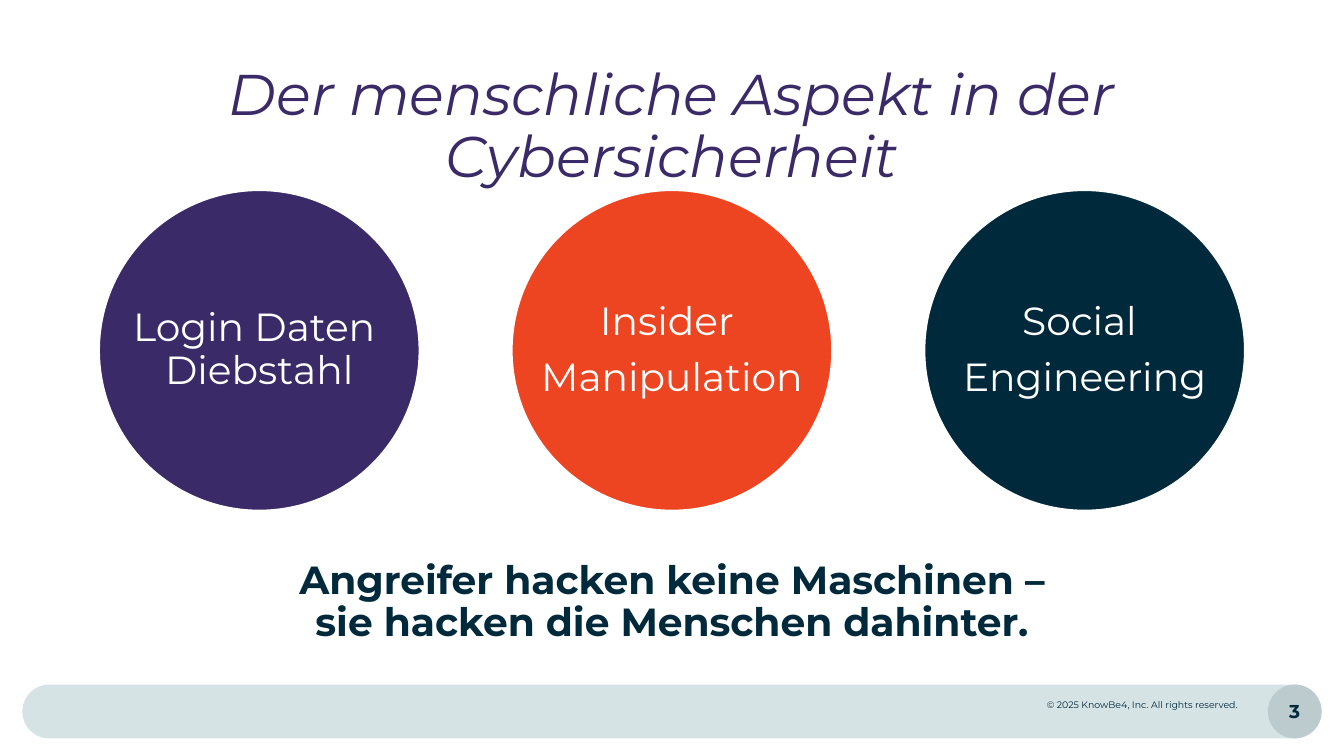
from pptx import Presentation
from pptx.dml.color import RGBColor
from pptx.enum.shapes import MSO_SHAPE as Preset
from pptx.enum.text import MSO_ANCHOR as Anchor, PP_ALIGN as Align
from pptx.util import Pt

FONT = "Montserrat"
PURPLE, ORANGE, NAVY = "3A2A68", "ED4422", "00293C"
MIST, STEEL, WHITE = "D5E3E5", "BBCBCE", "FFFFFF"
WIDTH, HEIGHT = 960, 540


def color(value):
    return RGBColor.from_string(value)


def write(frame, text, *, size, ink=NAVY, bold=False, italic=False,
          align=Align.CENTER, anchor=Anchor.MIDDLE, spacing=1.0,
          before=0, inset=0, wrap=True):
    """Fill a frame: a newline starts a paragraph, a vertical tab breaks a line."""
    frame.word_wrap = wrap
    frame.vertical_anchor = anchor
    frame.margin_left = frame.margin_right = Pt(inset)
    frame.margin_top = frame.margin_bottom = Pt(inset)
    for index, line in enumerate(text.split("\n")):
        para = frame.add_paragraph() if index else frame.paragraphs[0]
        para.text = line
        para.alignment = align
        para.line_spacing = spacing
        para.space_before = Pt(before if index else 0)
        for span in para.runs:
            span.font.name = FONT
            span.font.size = Pt(size)
            span.font.bold = bold
            span.font.italic = italic
            span.font.color.rgb = color(ink)


class Painter:
    def __init__(self, page):
        self.page = page

    def shape(self, preset, left, top, width, height, fill, outline=None):
        shape = self.page.shapes.add_shape(
            preset, Pt(left), Pt(top), Pt(width), Pt(height))
        shape.shadow.inherit = False
        shape.fill.solid()
        shape.fill.fore_color.rgb = color(fill)
        if outline:
            shape.line.color.rgb = color(outline)
            shape.line.width = Pt(2)
        else:
            shape.line.fill.background()
        return shape

    def text(self, left, top, width, height, text, **style):
        box = self.page.shapes.add_textbox(
            Pt(left), Pt(top), Pt(width), Pt(height))
        write(box.text_frame, text, **style)


def main():
    deck = Presentation()
    deck.slide_width, deck.slide_height = Pt(WIDTH), Pt(HEIGHT)
    painter = Painter(deck.slides.add_slide(deck.slide_layouts[6]))

    # Footer bar with copyright line and page number
    bar_left, bar_top, bar_width, bar_height = 16, 489, 928, 38.4
    badge_left = bar_left + bar_width - bar_height
    bar = painter.shape(Preset.ROUNDED_RECTANGLE, bar_left, bar_top,
                        bar_width, bar_height, MIST)
    bar.adjustments[0] = 0.5
    badge = painter.shape(Preset.OVAL, badge_left, bar_top,
                          bar_height, bar_height, STEEL)
    write(badge.text_frame, "3", size=13.3, bold=True, wrap=False)
    painter.text(621.4, 495.4, 274.3, 27.4,
                 "© 2025 KnowBe4, Inc. All rights reserved. ",
                 size=6.7, align=Align.RIGHT, anchor=Anchor.TOP, inset=9.6)

    # Title
    painter.text(36, 46.8, WIDTH - 2 * 36, 89.3,
                 "Der menschliche Aspekt in der Cybersicherheit",
                 size=41, ink=PURPLE, italic=True, anchor=Anchor.TOP,
                 spacing=0.9)

    # Three circles, evenly spaced around the slide's centre
    diameter, pitch, circle_top = 229.6, 294.8, 135.5
    circles = [("Login Daten \vDiebstahl", PURPLE),
               ("Insider \nManipulation", ORANGE),
               ("Social \nEngineering", NAVY)]
    for index, (label, fill) in enumerate(circles):
        left = (WIDTH - diameter) / 2 + (index - 1) * pitch
        circle = painter.shape(Preset.OVAL, left, circle_top,
                               diameter, diameter, fill, outline=WHITE)
        write(circle.text_frame, label, size=28, ink=WHITE,
              spacing=0.9, before=9.8, wrap=False)

    # Closing statement
    painter.text(178, 396.7, WIDTH - 2 * 178, 67.7,
                 "Angreifer hacken keine Maschinen –\n"
                 "sie hacken die Menschen dahinter.",
                 size=28, bold=True, spacing=0.9, inset=12)

    deck.save("out.pptx")


if __name__ == "__main__":
    main()
